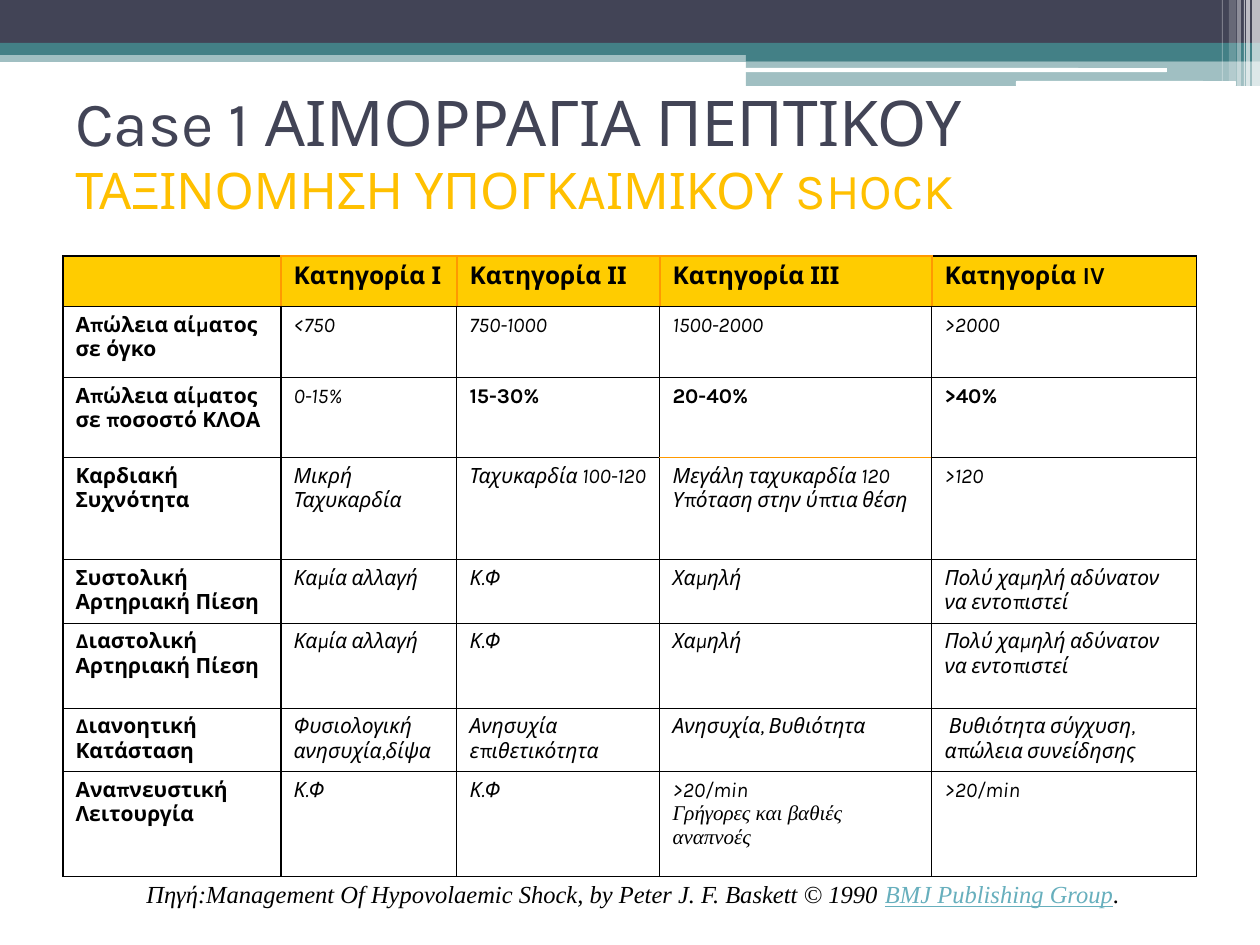
from lxml.etree import SubElement
from pptx import Presentation
from pptx.dml.color import RGBColor
from pptx.enum.shapes import MSO_SHAPE
from pptx.enum.text import MSO_ANCHOR
from pptx.oxml import parse_xml
from pptx.oxml.ns import nsdecls, qn
from pptx.util import Emu, Pt

PX = 914400 / 126
COLORS = {
    "navy": "424456", "teal": "438086", "white": "FFFFFF", "black": "000000",
    "amber": "FFC000", "header": "FFCC00", "orange": "FF9900", "link": "67AFBD",
}
SANS, SERIF = "Karla", "Times New Roman"

BANNER = [
    (0, 50, 1260, 12, "teal", 50),
    (0, 0, 1260, 43, "navy", 100),
    (0, 43, 1260, 12, "teal", 100),
    (746, 49, 514, 12, "teal", 100),
    (746, 61, 514, 25, "teal", 50),
]
BARS = [(745, 68, 422, 4), (1016, 81, 220, 5)]
STRIPES = [
    (1252, 8, 86, 65), (1246, 4, 86, 65), (1244, 1, 86, 60),
    (1237, 4, 86, 40), (1229, 7, 81, 20), (1222, 1, 81, 30),
]
TITLE = [
    ("Case 1 ΑΙΜΟΡΡΑΓΙΑ ΠΕΠΤΙΚΟΥ", 36, "navy"),
    ("ΤΑΞΙΝΟΜΗΣΗ ΥΠΟΓΚAΙΜΙΚΟΥ SHOCK", 28.8, "amber"),
]
COLUMN_WIDTHS = [218, 176, 203, 272, 265]
ROW_HEIGHTS = [49, 71, 80, 102, 64, 85, 63, 105]
ROWS = [
    ["", "Κατηγορία Ι", "Κατηγορία ΙΙ", "Κατηγορία ΙΙΙ", "Κατηγορία IV"],
    ["Απώλεια αίματος σε όγκο", "<750", "750-1000", "1500-2000", ">2000"],
    ["Απώλεια αίματος σε ποσοστό ΚΛΟΑ", "0-15%", "15-30%", "20-40%", ">40%"],
    ["Καρδιακή Συχνότητα", "Μικρή Ταχυκαρδία", "Ταχυκαρδία 100-120",
     "Μεγάλη ταχυκαρδία 120\nΥπόταση στην ύπτια θέση", ">120"],
    ["Συστολική Αρτηριακή Πίεση", "Καμία αλλαγή", "Κ.Φ", "Χαμηλή",
     "Πολύ χαμηλή αδύνατον να εντοπιστεί"],
    ["Διαστολική Αρτηριακή Πίεση", "Καμία αλλαγή", "Κ.Φ", "Χαμηλή",
     "Πολύ χαμηλή αδύνατον να εντοπιστεί"],
    ["Διανοητική Κατάσταση", "Φυσιολογική ανησυχία,δίψα", "Ανησυχία επιθετικότητα",
     "Ανησυχία, Βυθιότητα", " Βυθιότητα σύγχυση, απώλεια συνείδησης"],
    ["Αναπνευστική Λειτουργία", "Κ.Φ", "Κ.Φ",
     ">20/min\nΓρήγορες και βαθιές αναπνοές", ">20/min"],
]
BOLD_VALUES = {(2, 2), (2, 3), (2, 4)}
SERIF_LINE = (7, 3, 1)
CITATION = [
    ("Πηγή:Management Of Hypovolaemic Shock, by Peter J. F. Baskett © 1990 ", "black", False),
    ("BMJ Publishing Group", "link", True),
    (".", "black", False),
]


def px(*lengths):
    return [Emu(round(length * PX)) for length in lengths]


def rgb(color):
    return RGBColor.from_string(COLORS[color])


def style(font, size, color, face=SANS, bold=False, italic=False):
    font.size, font.name, font.bold, font.italic = Pt(size), face, bold, italic
    font.color.rgb = rgb(color)


def add_band(slide, box, color, opacity=100, preset=MSO_SHAPE.RECTANGLE):
    band = slide.shapes.add_shape(preset, *px(*box))
    band.shadow.inherit = False
    band.line.fill.background()
    band.fill.solid()
    band.fill.fore_color.rgb = rgb(color)
    if opacity < 100:
        tint = band.fill._xPr.find(qn("a:solidFill"))[0]
        SubElement(tint, qn("a:alpha")).set("val", str(opacity * 1000))


def add_banner(slide):
    for *box, color, opacity in BANNER:
        add_band(slide, box, color, opacity)
    for box in BARS:
        add_band(slide, box, "white", preset=MSO_SHAPE.ROUNDED_RECTANGLE)
    for left, width, height, opacity in STRIPES:
        add_band(slide, (left, 0, width, height), "white", opacity)


def add_text(slide, box):
    frame = slide.shapes.add_textbox(*px(*box)).text_frame
    frame.word_wrap = True
    return frame


def add_title(slide):
    frame = add_text(slide, (63, 73, 1134, 158))
    frame.vertical_anchor = MSO_ANCHOR.MIDDLE
    heading = frame.paragraphs[0]
    heading.text = "\v".join(text for text, _, _ in TITLE)
    for run, (_, size, color) in zip(heading.runs, TITLE):
        style(run.font, size, color)


def cell_borders(row, column):
    thin, strong, accent = ("black", 0.75), ("black", 1), ("orange", 1)
    if row == 0:
        return {
            "L": accent if column else thin,
            "R": accent if column < 4 else thin,
            "T": accent if 0 < column < 4 else thin,
            "B": strong,
        }
    borders = dict.fromkeys("LRTB", thin)
    if row == 1:
        borders["T"] = strong
    if (row, column) == (2, 3):
        borders["B"] = accent
    if (row, column) == (3, 3):
        borders["T"] = accent
    return borders


def draw_borders(cell, borders):
    properties = cell._tc.get_or_add_tcPr()
    for index, (side, (color, width)) in enumerate(borders.items()):
        properties.insert(index, parse_xml(
            f'<a:ln{side} {nsdecls("a")} w="{Pt(width)}"><a:solidFill>'
            f'<a:srgbClr val="{COLORS[color]}"/></a:solidFill></a:ln{side}>'))


def add_categories(slide):
    box = (63, 256, sum(COLUMN_WIDTHS), sum(ROW_HEIGHTS))
    table = slide.shapes.add_table(len(ROWS), len(COLUMN_WIDTHS), *px(*box)).table
    table.first_row = table.horz_banding = False
    for column, width in zip(table.columns, px(*COLUMN_WIDTHS)):
        column.width = width
    for row, height in zip(table.rows, px(*ROW_HEIGHTS)):
        row.height = height
    for r, texts in enumerate(ROWS):
        for c, text in enumerate(texts):
            cell = table.cell(r, c)
            cell.fill.solid()
            cell.fill.fore_color.rgb = rgb("white" if r else "header")
            draw_borders(cell, cell_borders(r, c))
            cell.text_frame.text = text
            bold = r == 0 or c == 0 or (r, c) in BOLD_VALUES
            for n, paragraph in enumerate(cell.text_frame.paragraphs):
                face = SERIF if (r, c, n) == SERIF_LINE else SANS
                for run in paragraph.runs:
                    style(run.font, 12 if r else 14, "black", face, bold, not bold)


def add_citation(slide):
    source = add_text(slide, (134, 873, 1036, 42)).paragraphs[0]
    for text, color, underline in CITATION:
        run = source.add_run()
        run.text = text
        style(run.font, 14, color, SERIF, italic=True)
        run.font.underline = underline


def main():
    deck = Presentation()
    deck.slide_width, deck.slide_height = px(1260, 945)
    slide = deck.slides.add_slide(deck.slide_layouts[6])
    add_banner(slide)
    add_title(slide)
    add_categories(slide)
    add_citation(slide)
    deck.save("out.pptx")


if __name__ == "__main__":
    main()
